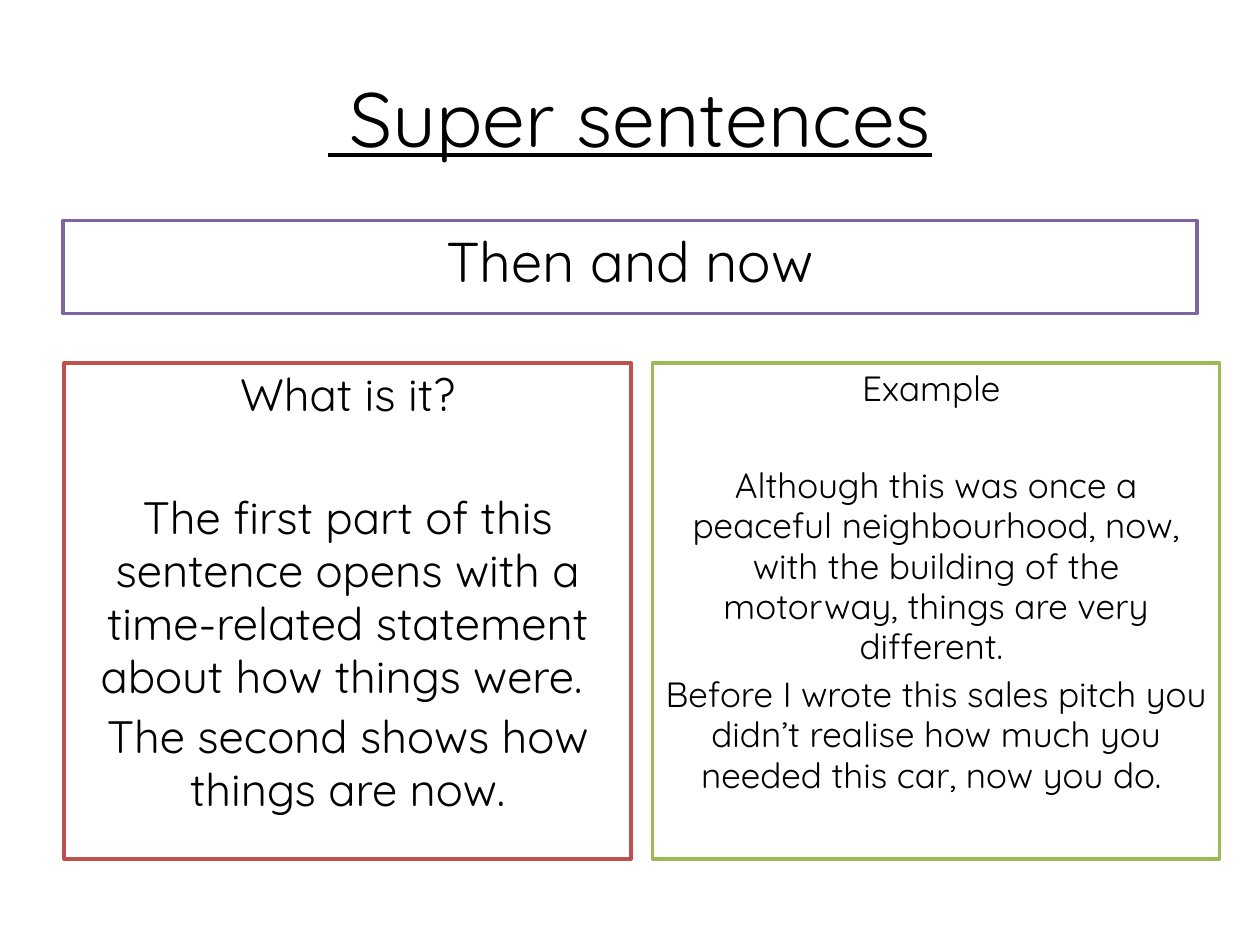
from pptx import Presentation
from pptx import util as u
from pptx.dml.color import RGBColor
from pptx.enum import shapes, text

FONT = "Quicksand"
W, H = 10, 7.5
MARGIN = 0.05 * W
PANEL_W, PANEL_H, PANEL_TOP = 0.45 * W, 0.525 * H, 2.88
PANEL_STEP = PANEL_W + 0.17


def color(value):
    return RGBColor.from_string(value)


def add_text(tf, paragraphs, size, line_spacing=1.0, underline=False):
    """Fill a frame from (space before in points, wording) pairs."""
    tf.word_wrap = True
    for i, (before, wording) in enumerate(paragraphs):
        p = tf.add_paragraph() if i else tf.paragraphs[0]
        p.alignment = text.PP_ALIGN.CENTER
        p.space_before = u.Pt(before)
        p.line_spacing = line_spacing
        r = p.add_run()
        r.text = wording
        r.font.name = FONT
        r.font.size = u.Pt(size)
        r.font.underline = underline
        r.font.color.rgb = color("000000")


def add_title(s, wording):
    sp = s.shapes.add_textbox(*map(u.Inches, (MARGIN, 0.04 * H, W - 2 * MARGIN, H / 6)))
    sp.text_frame.vertical_anchor = text.MSO_ANCHOR.MIDDLE
    add_text(sp.text_frame, [(0, wording)], 44, underline=True)


def add_box(s, left, top, width, height, line, paragraphs, size, line_spacing=1.0):
    sp = s.shapes.add_shape(shapes.MSO_SHAPE.RECTANGLE,
                            *map(u.Inches, (left, top, width, height)))
    sp.shadow.inherit = False
    sp.fill.solid()
    sp.fill.fore_color.rgb = color("FFFFFF")
    sp.line.color.rgb = color(line)
    sp.line.width = u.Pt(2)
    sp.text_frame.vertical_anchor = text.MSO_ANCHOR.TOP
    add_text(sp.text_frame, paragraphs, size, line_spacing)


def main():
    prs = Presentation()
    prs.slide_width, prs.slide_height = u.Inches(W), u.Inches(H)
    s = prs.slides.add_slide(prs.slide_layouts[6])

    add_title(s, " Super sentences")
    add_box(s, MARGIN, 1.75, W - 2 * MARGIN, 0.74, "8064A2", [(0, "Then and now")], 32)

    panels = [
        ("C0504D", 25.9, 0.97, [
            (0, "What is it?"),
            (40.5, "The first part of this sentence opens with a time-related "
                   "statement about how things were. "),
            (4.2, "The second shows how things are now."),
        ]),
        ("9BBB59", 20, 0.96, [
            (0, "Example "),
            (32.5, "Although this was once a peaceful neighbourhood, now, with the "
                   "building of the motorway, things are very different. "),
            (4.2, "Before I wrote this sales pitch you didn’t realise how much you "
                  "needed this car, now you do. "),
        ]),
    ]
    for column, (line, size, spacing, paragraphs) in enumerate(panels):
        add_box(s, 0.51 + column * PANEL_STEP, PANEL_TOP, PANEL_W, PANEL_H,
                line, paragraphs, size, spacing)

    prs.save("out.pptx")


if __name__ == "__main__":
    main()
